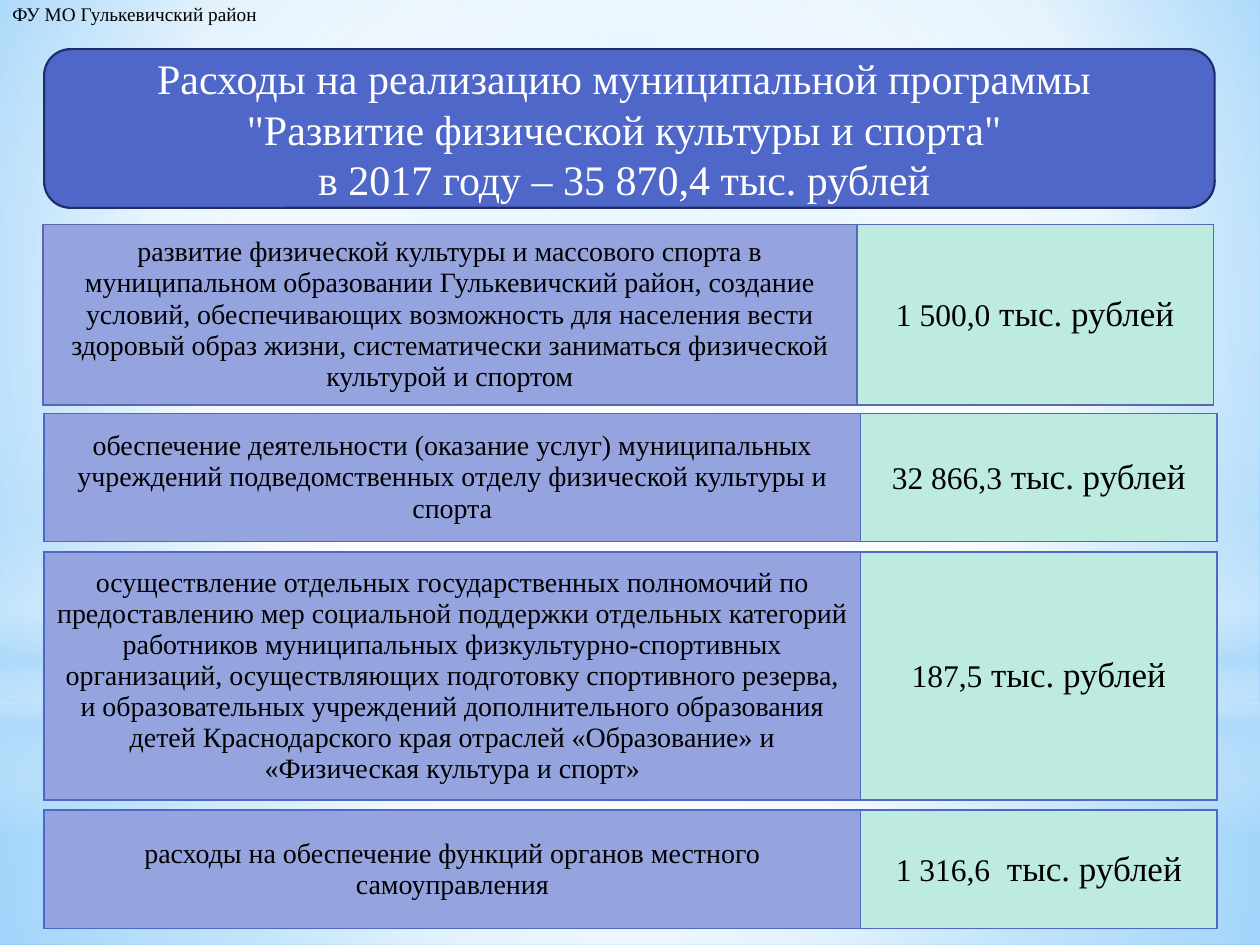
from lxml import etree
from pptx import Presentation
from pptx.dml.color import RGBColor
from pptx.enum.shapes import MSO_SHAPE
from pptx.enum.text import MSO_ANCHOR, PP_ALIGN
from pptx.oxml.ns import qn
from pptx.util import Inches, Pt

RECT, OVAL, ROUNDED = MSO_SHAPE.RECTANGLE, MSO_SHAPE.OVAL, MSO_SHAPE.ROUNDED_RECTANGLE
MIDDLE, CENTER = MSO_ANCHOR.MIDDLE, PP_ALIGN.CENTER

BLACK = RGBColor(0x00, 0x00, 0x00)
WHITE = RGBColor(0xFF, 0xFF, 0xFF)
BLUE = RGBColor(0x4E, 0x67, 0xC8)
NAVY = RGBColor(0x1F, 0x2E, 0x69)
SLATE = RGBColor(0x59, 0x68, 0xB0)
LAVENDER = RGBColor(0x95, 0xA4, 0xDE)
MINT = RGBColor(0xBE, 0xEB, 0xDF)
SKY = RGBColor(0xB4, 0xDC, 0xFA)
LIGHT_SKY = RGBColor(0x9E, 0xD5, 0xFF)
DEEP_SKY = RGBColor(0x5B, 0xB9, 0xFF)
FONT = "Times New Roman"

# Gradient stops: position %, colour, opacity %
BACKDROP = [(0, LIGHT_SKY, 100), (60, WHITE, 100), (100, DEEP_SKY, 100)]
LOWER_GLOW = [(0, WHITE, 91), (37, WHITE, 76), (100, SKY, 79)]
UPPER_GLOW = [(0, WHITE, 89), (48, WHITE, 62), (100, SKY, 79)]
HORIZON = [(0, WHITE, 0), (29, WHITE, 30), (45, SKY, 40),
           (55, WHITE, 26), (65, SKY, 60), (100, WHITE, 0)]
HALO = [(0, WHITE, 100), (56, WHITE, 0)]
MIDPOINT = (50, 50, 50, 50)

# Expense rows: box, first column width, border colour, purpose, amount, unit
EXPENSES = [
    ((0.34, 1.78, 9.29, 1.43), 6.46, SLATE,
     "развитие физической культуры и массового спорта в муниципальном образовании "
     "Гулькевичский район, создание условий, обеспечивающих возможность для населения "
     "вести здоровый образ жизни, систематически заниматься физической культурой и спортом",
     "1 500,0", " тыс. рублей"),
    ((0.35, 3.28, 9.31, 1.02), 6.48, BLUE,
     "обеспечение деятельности (оказание услуг) муниципальных учреждений "
     "подведомственных отделу физической культуры и спорта",
     "32 866,3", " тыс. рублей"),
    ((0.35, 4.38, 9.31, 1.97), 6.48, BLUE,
     "осуществление отдельных государственных полномочий по предоставлению мер "
     "социальной поддержки отдельных категорий работников муниципальных "
     "физкультурно-спортивных организаций, осуществляющих подготовку спортивного "
     "резерва, и образовательных учреждений дополнительного образования детей "
     "Краснодарского края отраслей «Образование» и «Физическая культура и спорт»",
     "187,5", " тыс. рублей"),
    ((0.35, 6.43, 9.31, 0.94), 6.48, BLUE,
     "расходы на обеспечение функций органов местного самоуправления",
     "1 316,6 ", " тыс. рублей"),
]


def inches(box):
    return [Inches(length) for length in box]


def add_color(parent, color, opacity=100):
    node = etree.SubElement(parent, qn("a:srgbClr"), val=str(color))
    if opacity < 100:
        etree.SubElement(node, qn("a:alpha"), val=str(opacity * 1000))


def set_gradient(fill, element, stops, center=None):
    """Radial gradient around center, or a vertical one without it."""
    fill.gradient()
    gradient = element.find(".//" + qn("a:gradFill"))
    for child in list(gradient):
        gradient.remove(child)
    stop_list = etree.SubElement(gradient, qn("a:gsLst"))
    for position, color, opacity in stops:
        stop = etree.SubElement(stop_list, qn("a:gs"), pos=str(position * 1000))
        add_color(stop, color, opacity)
    if center:
        radial = etree.SubElement(gradient, qn("a:path"), path="circle")
        sides = {side: str(value * 1000) for side, value in zip("ltrb", center)}
        etree.SubElement(radial, qn("a:fillToRect"), **sides)
    else:
        etree.SubElement(gradient, qn("a:lin"), ang="5400000", scaled="0")


def format_run(run, size, color):
    run.font.name, run.font.size = FONT, Pt(size)
    run.font.color.rgb = color


def add_backdrop(slide):
    set_gradient(slide.background.fill, slide.element, BACKDROP, (20, 10, 20, 60))
    for kind, box, stops, center in [
        (RECT, (0, 5.58, 10, 1.92), LOWER_GLOW, MIDPOINT),
        (RECT, (0, 0, 10, 5.58), UPPER_GLOW, MIDPOINT),
        (RECT, (0, 4.12, 10, 2.5), HORIZON, None),
        (OVAL, (0, 1.75, 10, 5.58), HALO, MIDPOINT),
    ]:
        glow = slide.shapes.add_shape(kind, *inches(box))
        glow.shadow.inherit = False
        glow.line.fill.background()
        set_gradient(glow.fill, glow.element, stops, center)


def add_department(slide, box):
    department = slide.shapes.add_textbox(*inches(box)).text_frame
    department.word_wrap = False
    department.text = "ФУ МО Гулькевичский район"
    format_run(department.paragraphs[0].runs[0], 11, BLACK)


def add_title(slide, box):
    banner = slide.shapes.add_shape(ROUNDED, *inches(box))
    banner.shadow.inherit = False
    banner.fill.solid()
    banner.fill.fore_color.rgb = BLUE
    banner.line.color.rgb = NAVY
    banner.line.width = Pt(1.25)
    title = banner.text_frame
    title.word_wrap = True
    title.vertical_anchor = MIDDLE
    title.text = ("Расходы на реализацию муниципальной программы \n"
                  "\"Развитие физической культуры и спорта\" \n"
                  "в 2017 году – 35 870,4 тыс. рублей ")
    for line in title.paragraphs:
        line.alignment = CENTER
        format_run(line.runs[0], 24, WHITE)


def fill_cell(cell, color, border, parts):
    cell.fill.solid()
    cell.fill.fore_color.rgb = color
    cell.vertical_anchor = MIDDLE
    paragraph = cell.text_frame.paragraphs[0]
    paragraph.alignment = CENTER
    for text, size in parts:
        run = paragraph.add_run()
        run.text = text
        format_run(run, size, BLACK)
    # Borders come before the fill in the cell properties
    properties = cell._tc.get_or_add_tcPr()
    for index, side in enumerate("LRTB"):
        edge = etree.Element(qn("a:ln" + side), w=str(Pt(1)))
        add_color(etree.SubElement(edge, qn("a:solidFill")), border)
        properties.insert(index, edge)


def add_expense(slide, box, purpose_width, border, purpose, amount, unit):
    table = slide.shapes.add_table(1, 2, *inches(box)).table
    table.first_row = table.horz_banding = False
    table.columns[0].width = Inches(purpose_width)
    table.columns[1].width = Inches(box[2] - purpose_width)
    fill_cell(table.cell(0, 0), LAVENDER, border, [(purpose, 16)])
    fill_cell(table.cell(0, 1), MINT, border, [(amount, 18), (unit, 20)])


def main():
    deck = Presentation()
    deck.slide_width, deck.slide_height = Inches(10), Inches(7.5)
    slide = deck.slides.add_slide(deck.slide_layouts[6])
    add_backdrop(slide)
    add_department(slide, (0, -0.03, 2.18, 0.29))
    add_title(slide, (0.35, 0.39, 9.29, 1.26))
    for expense in EXPENSES:
        add_expense(slide, *expense)
    deck.save("out.pptx")


if __name__ == "__main__":
    main()
